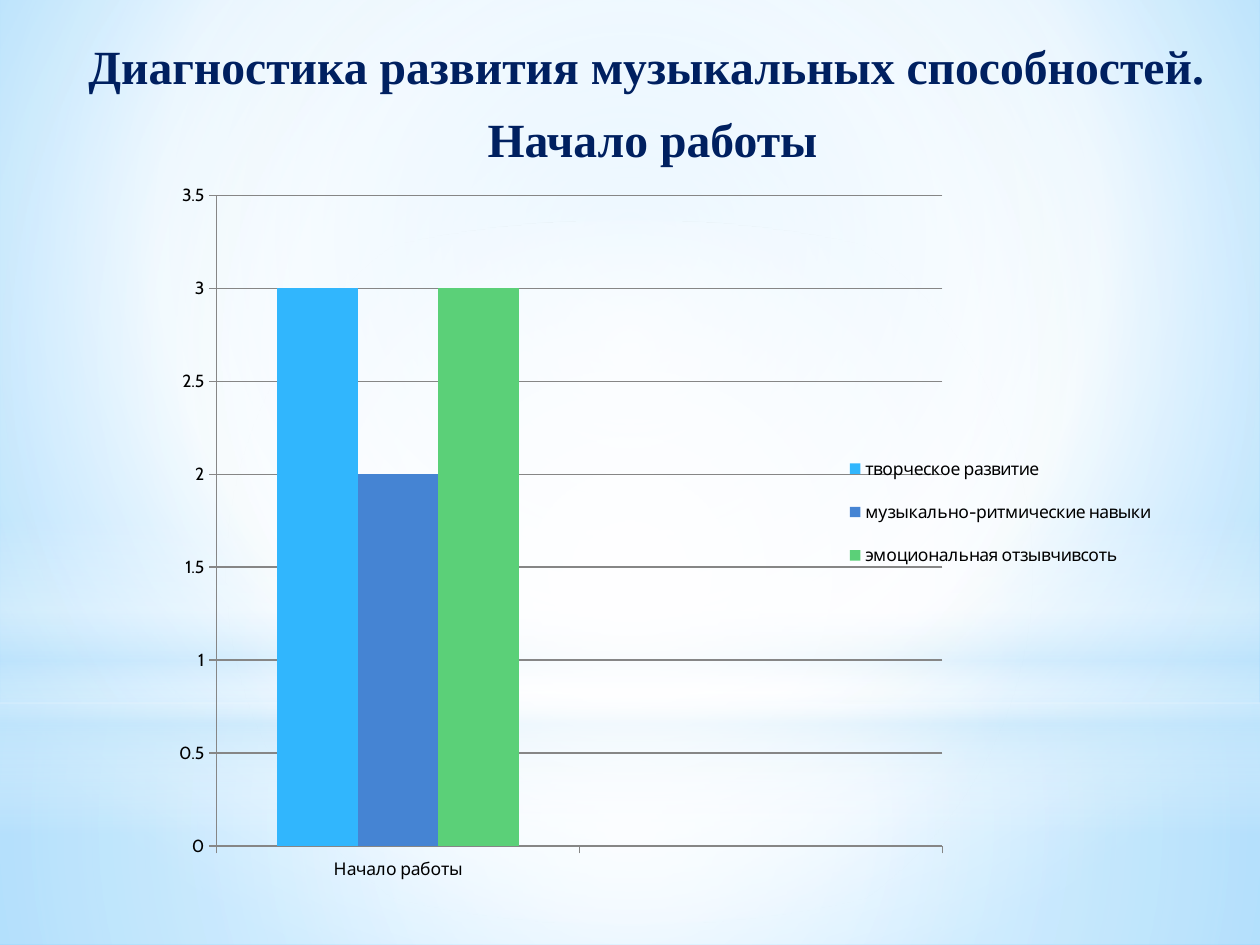
import pptx
import pptx.chart.data
import pptx.dml.color
import pptx.enum.chart
import pptx.enum.shapes
import pptx.enum.text
import pptx.oxml
import pptx.oxml.ns
import pptx.util
from pptx.util import Inches, Pt

# Content
HEADING = ["Диагностика развития музыкальных способностей. ", "Начало работы"]
CATEGORIES = ["Начало работы", ""]
SKILLS = [
    ("творческое развитие", 3, "31B6FD"),
    ("музыкально-ритмические навыки", 2, "4584D3"),
    ("эмоциональная отзывчивсоть ", 3, "5BD078"),
]

# Gradients: stops are (position %, colour, opacity %); focus is left, top, right, bottom %
CENTRE = (50, 50, 50, 50)
BACKDROP = ([(0, "B0E0FF", 100), (60, "FFFFFF", 100), (100, "6BC5FF", 100)], (20, 10, 20, 60))
GLOWS = [
    ("RECTANGLE", (0, 5.58, 10, 1.92),
     [(0, "FFFFFF", 91), (37, "FFFFFF", 76), (100, "C6E7FC", 79)], CENTRE),
    ("RECTANGLE", (0, 0, 10, 5.58),
     [(0, "FFFFFF", 89), (48, "FFFFFF", 62), (100, "C6E7FC", 79)], CENTRE),
    ("RECTANGLE", (0, 4.12, 10, 2.5),
     [(0, "FFFFFF", 0), (29, "FFFFFF", 30), (45, "C6E7FC", 40),
      (55, "FFFFFF", 26), (65, "C6E7FC", 60), (100, "FFFFFF", 0)], None),
    ("OVAL", (0, 1.75, 10, 5.58), [(0, "FFFFFF", 100), (56, "FFFFFF", 0)], CENTRE),
]

# Formats
HEADING_FONT = {"name": "Times New Roman", "size": Pt(27.2), "bold": True}
CHART_FONT = {"name": "Cabin", "size": Pt(10)}
HEADING_FRAME = {"word_wrap": True, "auto_size": pptx.enum.text.MSO_AUTO_SIZE.NONE,
                 "vertical_anchor": pptx.enum.text.MSO_ANCHOR.TOP,
                 "margin_top": Inches(0.08)}
VALUE_SCALE = {"minimum_scale": 0, "maximum_scale": 3.5, "major_unit": 0.5,
               "has_major_gridlines": True}
PLOT_AREA = (0.146, 0.028, 0.615, 0.898)
LEGEND_AREA = (0.66, 0.36, 0.3, 0.21)


def rgb(value):
    return pptx.dml.color.RGBColor.from_string(value)


def apply(target, formats):
    for name, value in formats.items():
        setattr(target, name, value)


def gradient(stops, focus):
    marks = "".join(
        f'<a:gs pos="{pos * 1000}"><a:srgbClr val="{color}">'
        f'<a:alpha val="{opacity * 1000}"/></a:srgbClr></a:gs>'
        for pos, color, opacity in stops)
    if focus:
        edges = " ".join(f'{side}="{part * 1000}"' for side, part in zip("ltrb", focus))
        direction = f'<a:path path="circle"><a:fillToRect {edges}/></a:path>'
    else:
        direction = '<a:lin ang="5400000" scaled="0"/>'
    return pptx.oxml.parse_xml(
        f'<a:gradFill {pptx.oxml.ns.nsdecls("a")} rotWithShape="1">'
        f'<a:gsLst>{marks}</a:gsLst>{direction}</a:gradFill>')


def replace_solid(parent, stops, focus):
    solid = parent.find(".//" + pptx.oxml.ns.qn("a:solidFill"))
    solid.getparent().replace(solid, gradient(stops, focus))


def manual_layout(area, inner=False):
    target = '<c:layoutTarget val="inner"/>' if inner else ""
    modes = "".join(f'<c:{axis}Mode val="edge"/>' for axis in "xy")
    sizes = "".join(f'<c:{side} val="{part}"/>' for side, part in zip("xywh", area))
    return pptx.oxml.parse_xml(
        f'<c:layout {pptx.oxml.ns.nsdecls("c")}><c:manualLayout>'
        f'{target}{modes}{sizes}</c:manualLayout></c:layout>')


def set_layout(element, layout, position):
    for old in element.findall(pptx.oxml.ns.qn("c:layout")):
        element.remove(old)
    element.insert(position, layout)


deck = pptx.Presentation()
deck.slide_width, deck.slide_height = Inches(10), Inches(7.5)
slide = deck.slides.add_slide(deck.slide_layouts[5])

# Background and soft glows
backdrop = slide.background.fill
backdrop.solid()
backdrop.fore_color.rgb = rgb("FFFFFF")
replace_solid(slide.background._cSld, *BACKDROP)
for outline, place, stops, focus in GLOWS:
    glow = slide.shapes.add_shape(
        getattr(pptx.enum.shapes.MSO_SHAPE, outline), *map(Inches, place))
    glow.shadow.inherit = False
    glow.line.fill.background()
    glow.fill.solid()
    glow.fill.fore_color.rgb = rgb("FFFFFF")
    replace_solid(glow._element.spPr, stops, focus)

# Skills chart
skill_data = pptx.chart.data.CategoryChartData()
skill_data.categories = CATEGORIES
for skill, score, _ in SKILLS:
    skill_data.add_series(skill, (score, None))
chart = slide.shapes.add_chart(
    pptx.enum.chart.XL_CHART_TYPE.COLUMN_CLUSTERED,
    *map(Inches, (0.35, 1.39, 9.37, 5.75)), skill_data).chart
chart.has_title = False
apply(chart.font, CHART_FONT)
chart.font.color.rgb = rgb("000000")

bars = chart.plots[0]
apply(bars, {"gap_width": 150, "overlap": 0, "vary_by_categories": False})
for column, (_, _, color) in zip(bars.series, SKILLS):
    column.format.fill.solid()
    column.format.fill.fore_color.rgb = rgb(color)

apply(chart.value_axis, VALUE_SCALE)
chart.value_axis.tick_labels.number_format = "General"
chart.value_axis.tick_labels.number_format_is_linked = False
for axis in (chart.category_axis, chart.value_axis):
    axis.major_tick_mark = pptx.enum.chart.XL_TICK_MARK.OUTSIDE
for ruled in (chart.category_axis, chart.value_axis, chart.value_axis.major_gridlines):
    ruled.format.line.color.rgb = rgb("868686")
    ruled.format.line.width = Pt(0.75)

chart.has_legend = True
apply(chart.legend, {"position": pptx.enum.chart.XL_LEGEND_POSITION.RIGHT,
                     "include_in_layout": False})
set_layout(chart._chartSpace.chart.plotArea, manual_layout(PLOT_AREA, inner=True), 0)
set_layout(chart.legend._element, manual_layout(LEGEND_AREA), 1)

# Heading, in front of the chart
heading = slide.shapes.title
slide.shapes._spTree.append(heading._element)
apply(heading, dict(zip(("left", "top", "width", "height"),
                        map(Inches, (0.31, 0.21, 9.69, 1.42)))))
apply(heading.text_frame, HEADING_FRAME)
heading.text_frame.text = "\n".join(HEADING)
for number, line in enumerate(heading.text_frame.paragraphs):
    line._p.get_or_add_pPr().set("marL", str(Inches(0.05)))
    apply(line, {"alignment": pptx.enum.text.PP_ALIGN.CENTER,
                 "space_before": Pt(6 if number else 0), "space_after": Pt(3)})
    for run in line.runs:
        apply(run.font, HEADING_FONT)
        run.font.color.rgb = rgb("002060")

deck.save("out.pptx")
